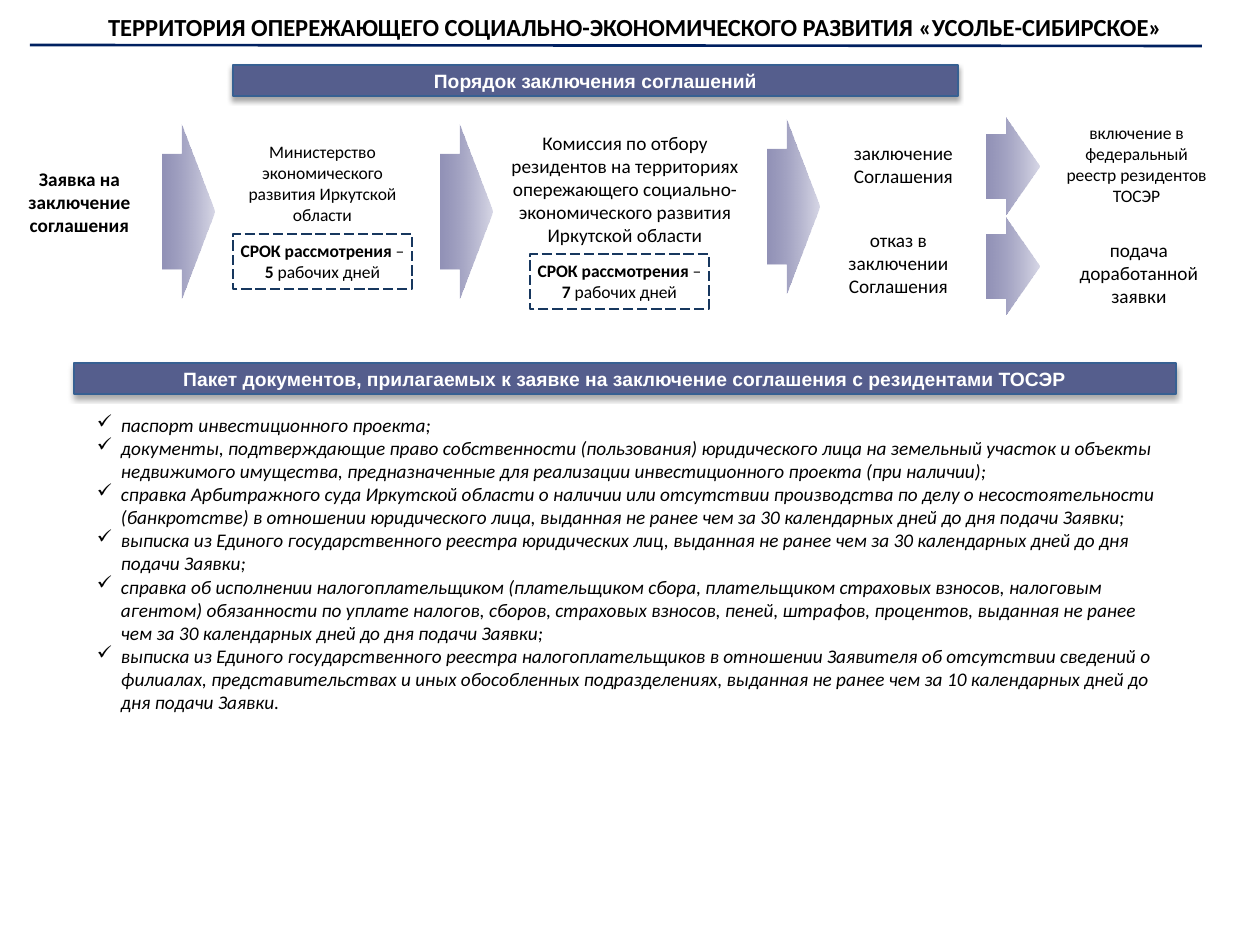
import pptx
import pptx.util
import pptx.dml.color
import pptx.enum.dml
import pptx.enum.shapes
import pptx.enum.text
import pptx.oxml
import pptx.oxml.ns

SCALE = 914400 / 126
NAVY = "002060"
SHAPE = pptx.enum.shapes.MSO_SHAPE
ALIGN = pptx.enum.text.PP_ALIGN
ANCHOR = pptx.enum.text.MSO_ANCHOR

PAPERS = [
    "паспорт инвестиционного проекта;",
    "документы, подтверждающие право собственности (пользования) юридического лица на земельный участок и объекты недвижимого имущества, предназначенные для реализации инвестиционного проекта (при наличии);",
    "справка Арбитражного суда Иркутской области о наличии или отсутствии производства по делу о несостоятельности (банкротстве) в отношении юридического лица, выданная не ранее чем за 30 календарных дней до дня подачи Заявки;",
    "выписка из Единого государственного реестра юридических лиц, выданная не ранее чем за 30 календарных дней до дня подачи Заявки;",
    "справка об исполнении налогоплательщиком (плательщиком сбора, плательщиком страховых взносов, налоговым агентом) обязанности по уплате налогов, сборов, страховых взносов, пеней, штрафов, процентов, выданная не ранее чем за 30 календарных дней до дня подачи Заявки;",
    "выписка из Единого государственного реестра налогоплательщиков в отношении Заявителя об отсутствии сведений о филиалах, представительствах и иных обособленных подразделениях, выданная не ранее чем за 10 календарных дней до дня подачи Заявки.",
]


def px(*nums):
    return [pptx.util.Emu(round(n * SCALE)) for n in nums]


def rgb(code):
    return pptx.dml.color.RGBColor.from_string(code)


def add_xml(host, tag, body="", attrs=""):
    space = pptx.oxml.ns.nsdecls("a")
    host.append(pptx.oxml.parse_xml(f"<a:{tag} {space} {attrs}>{body}</a:{tag}>"))


def write(shape, text, size=11, font="Calibri", color="000000", bold=False,
          italic=False, align=ALIGN.CENTER, anchor=ANCHOR.TOP, side=13,
          wrap=True, mark=None):
    """Fill a shape; text is a list of paragraphs, each a string or a list of (text, bold)."""
    frame = shape.text_frame
    frame.word_wrap = wrap
    frame.vertical_anchor = anchor
    frame.margin_left, frame.margin_right = px(side, side)
    frame.margin_top, frame.margin_bottom = px(6, 6)
    for i, item in enumerate(text):
        para = frame.paragraphs[0] if i == 0 else frame.add_paragraph()
        para.alignment = align
        if mark:
            props = para._p.get_or_add_pPr()
            hang = px(24)[0]
            props.set("marL", str(hang))
            props.set("indent", str(-hang))
            add_xml(props, "buChar", attrs=f'char="{mark}"')
        parts = [(item, bold)] if isinstance(item, str) else item
        for words, heavy in parts:
            run = para.add_run()
            run.text = words
            run.font.name = font
            run.font.size = pptx.util.Pt(size)
            run.font.bold = heavy
            run.font.italic = italic
            run.font.color.rgb = rgb(color)


def label(slide, box, text, **style):
    write(slide.shapes.add_textbox(*px(*box)), text, **style)


def block(slide, kind, box):
    shape = slide.shapes.add_shape(kind, *px(*box))
    shape.shadow.inherit = False
    return shape


def border(shape, color):
    shape.line.color.rgb = rgb(color)
    shape.line.width = pptx.util.Pt(0.75)


def banner(slide, box, text):
    bar = block(slide, SHAPE.RECTANGLE, box)
    bar.fill.solid()
    bar.fill.fore_color.rgb = rgb("555E8D")
    border(bar, "376092")
    glow = bar._element.spPr.find(pptx.oxml.ns.qn("a:effectLst"))
    add_xml(glow, "outerShdw",
            '<a:srgbClr val="000000"><a:alpha val="35000"/></a:srgbClr>',
            'blurRad="39370" dist="22860" dir="5400000" rotWithShape="0"')
    write(bar, [text], font="Arial", color="FFFFFF", bold=True,
          anchor=ANCHOR.MIDDLE, wrap=False)


def arrow(slide, left, top, high):
    shape = block(slide, SHAPE.RIGHT_ARROW, (left, top, 52, high))
    shape.adjustments[0] = 0.66
    shape.adjustments[1] = 0.63
    shape.line.fill.background()
    shape.fill.gradient()
    shape.fill.gradient_angle = 0
    tints = [("24246E", 50), ("C7C7DC", 71)]
    for stop, (color, _) in zip(shape.fill.gradient_stops, tints):
        stop.color.rgb = rgb(color)
    hues = shape._element.spPr.iter(pptx.oxml.ns.qn("a:srgbClr"))
    for hue, (_, alpha) in zip(list(hues), tints):
        add_xml(hue, "alpha", attrs=f'val="{alpha * 1000}"')


def term(slide, left, top, days):
    """Dashed box with the time allowed for a review."""
    box = block(slide, SHAPE.RECTANGLE, (left, top, 179, 55))
    box.fill.background()
    border(box, "17375E")
    box.line.dash_style = pptx.enum.dml.MSO_LINE.LONG_DASH
    write(box, [[("СРОК рассмотрения ", True), ("– ", False),
                 (days, True), (" рабочих дней", False)]], size=10, side=5)


def header(slide):
    ends = px(30, 45, 1202, 46)
    rule = slide.shapes.add_connector(pptx.enum.shapes.MSO_CONNECTOR.STRAIGHT, *ends)
    rule.line.color.rgb = rgb(NAVY)
    rule.line.width = pptx.util.Pt(1.5)
    add_xml(rule._element.spPr, "effectLst")
    label(slide, (35, 6, 1201, 43),
          ["ТЕРРИТОРИЯ ОПЕРЕЖАЮЩЕГО СОЦИАЛЬНО-ЭКОНОМИЧЕСКОГО РАЗВИТИЯ «УСОЛЬЕ-СИБИРСКОЕ»"],
          size=14, bold=True)


def steps(slide):
    for left, top, high in [(163, 125, 174), (441, 125, 174), (768, 120, 174),
                            (987, 118, 96), (987, 218, 96)]:
        arrow(slide, left, top, high)
    label(slide, (-15, 161, 189, 83), ["Заявка на заключение соглашения"],
          bold=True, side=5)
    label(slide, (233, 135, 179, 97),
          ["Министерство экономического развития Иркутской области"], size=10, side=5)
    label(slide, (491, 125, 268, 130),
          ["Комиссия по отбору резидентов на территориях опережающего "
           "социально-экономического развития Иркутской области"])
    term(slide, 233, 234, "5")
    term(slide, 530, 254, "7")
    label(slide, (1057, 116, 159, 97),
          ["включение в федеральный реестр резидентов ТОСЭР"], size=10, side=5)
    for box, text in [((809, 135, 189, 59), "заключение Соглашения"),
                      ((809, 221, 179, 83), "отказ в заключении Соглашения"),
                      ((1057, 231, 164, 83), "подача доработанной заявки")]:
        label(slide, box, [text], anchor=ANCHOR.MIDDLE)


def main():
    deck = pptx.Presentation()
    deck.slide_width, deck.slide_height = px(1260, 945)
    slide = deck.slides.add_slide(deck.slide_layouts[6])
    header(slide)
    banner(slide, (233, 65, 725, 31), "Порядок заключения соглашений")
    steps(slide)
    banner(slide, (74, 363, 1102, 31),
           "Пакет документов, прилагаемых к заявке на заключение соглашения с резидентами ТОСЭР")
    label(slide, (84, 407, 1101, 339), PAPERS, italic=True,
          align=ALIGN.LEFT, mark="✓")
    deck.save("out.pptx")


if __name__ == "__main__":
    main()
